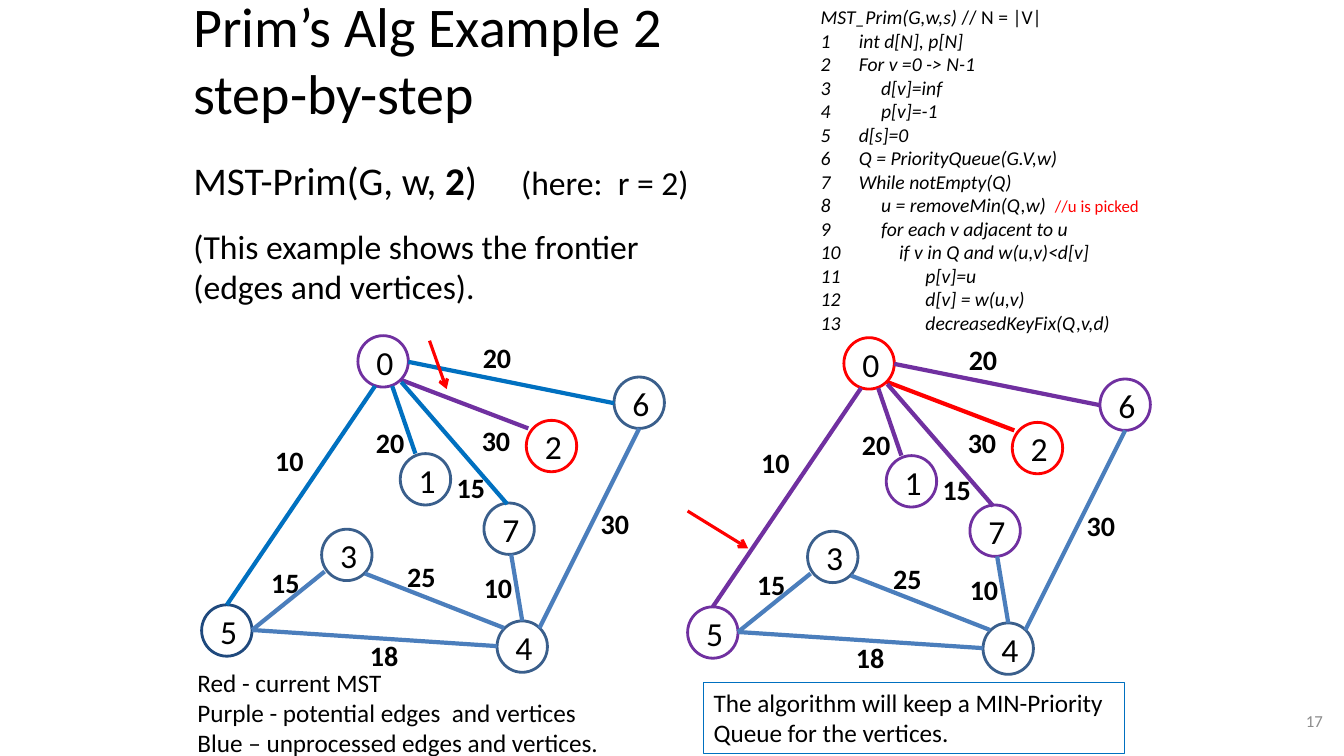
import dataclasses

import lxml.etree
import pptx
import pptx.dml.color
import pptx.enum.shapes
import pptx.enum.text
import pptx.oxml.ns
import pptx.util

Inches, Pt = pptx.util.Inches, pptx.util.Pt
qn = pptx.oxml.ns.qn
MSO_SHAPE = pptx.enum.shapes.MSO_SHAPE
ALIGN = pptx.enum.text.PP_ALIGN
ANCHOR = pptx.enum.text.MSO_ANCHOR
AUTO_SIZE = pptx.enum.text.MSO_AUTO_SIZE
BREAK = None


@dataclasses.dataclass
class Theme:
    font: str = "Calibri"
    # Colours
    text: str = "000000"
    muted: str = "8C8C8C"
    tree: str = "FF0000"
    frontier: str = "7030A0"
    pending: str = "0070C0"
    waiting: str = "4B7EBC"
    outline: str = "3A5F8C"
    navy: str = "1F497D"
    # Type sizes
    title: int = 40
    call: int = 28
    body: int = 24
    weight: int = 20
    note: int = 18
    code: int = 14
    small: int = 12


class Board:
    def __init__(self, slide, theme):
        self.slide, self.theme = slide, theme

    def paint(self, line, color, width):
        line.color.rgb = pptx.dml.color.RGBColor.from_string(color)
        line.width = Pt(width)

    def add_runs(self, paragraph, runs, size, color=None, **formats):
        """Add runs; each is a string, BREAK, or a (string, overrides) pair."""
        for item in runs:
            if item is BREAK:
                paragraph.add_line_break()
                continue
            words, changes = (item, {}) if isinstance(item, str) else item
            values = {"name": self.theme.font, "size": size,
                      "color": color or self.theme.text, **formats, **changes}
            run = paragraph.add_run()
            run.text = words
            run.font.color.rgb = pptx.dml.color.RGBColor.from_string(values.pop("color"))
            values["size"] = Pt(values["size"])
            for key, value in values.items():
                setattr(run.font, key, value)

    def fill_frame(self, frame, paragraphs, size, align=ALIGN.LEFT, wrap=True,
                   anchor=ANCHOR.TOP, auto=AUTO_SIZE.NONE, **formats):
        settings = {"word_wrap": wrap, "vertical_anchor": anchor, "auto_size": auto}
        for key, value in settings.items():
            setattr(frame, key, value)
        for i, runs in enumerate(paragraphs):
            paragraph = frame.add_paragraph() if i else frame.paragraphs[0]
            paragraph.alignment = align
            self.add_runs(paragraph, runs, size, **formats)

    def text(self, box, paragraphs, size, group=None, **options):
        shapes = (group or self.slide).shapes
        frame = shapes.add_textbox(*map(Inches, box)).text_frame
        self.fill_frame(frame, paragraphs, size, **options)
        return frame

    def outline(self, kind, box, color, width, group=None):
        shape = (group or self.slide).shapes.add_shape(kind, *map(Inches, box))
        shape.shadow.inherit = False
        shape.fill.background()
        self.paint(shape.line, color, width)
        return shape

    def line(self, ends, color, width, group=None, arrow=False):
        connector = (group or self.slide).shapes.add_connector(
            pptx.enum.shapes.MSO_CONNECTOR.STRAIGHT, *map(Inches, ends))
        self.paint(connector.line, color, width)
        properties = connector._element.spPr
        if arrow:
            lxml.etree.SubElement(properties.find(qn("a:ln")), qn("a:tailEnd"), type="arrow")
        lxml.etree.SubElement(properties, qn("a:effectLst"))

    def number(self, paragraph, margin):
        properties = paragraph._p.get_or_add_pPr()
        properties.set("marL", str(Inches(margin)))
        properties.set("indent", str(-Inches(margin)))
        lxml.etree.SubElement(properties, qn("a:buAutoNum"), type="arabicPlain")

    def tab_stop(self, paragraph, position):
        tabs = lxml.etree.SubElement(paragraph._p.get_or_add_pPr(), qn("a:tabLst"))
        lxml.etree.SubElement(tabs, qn("a:tab"), pos=str(Inches(position)), algn="l")

    def graph(self, dx, dy, node_colors, edge_colors):
        group = self.slide.shapes.add_group_shape()
        for name, (x, y) in NODES.items():
            x, y = x + dx, y + dy
            color = node_colors.get(name, self.theme.outline)
            self.outline(MSO_SHAPE.OVAL, (x, y, 0.5, 0.51), color, 2, group)
            self.text((x, y + 0.01, 0.46, 0.5), [[f" {name}"]], self.theme.body,
                      group, align=ALIGN.CENTER)
        for pair, (x1, y1, x2, y2) in EDGES.items():
            self.line((x1 + dx, y1 + dy, x2 + dx, y2 + dy),
                      edge_colors.get(pair, self.theme.waiting), 3, group)
        for weight, x, y in WEIGHTS:
            self.text((x + dx, y + dy, 0.49, 0.44), [[str(weight)]], self.theme.weight,
                      wrap=False, bold=True)


# Graph geometry, shared by both stages
NODES = {0: (3.55, 3.33), 1: (3.97, 4.5), 7: (4.8, 4.99), 2: (5.22, 4.17),
         5: (2, 6), 3: (3.19, 5.25), 4: (4.93, 6.16), 6: (6.09, 3.74)}
EDGES = {(0, 6): (4.05, 3.59, 6.09, 4), (0, 2): (3.98, 3.77, 5.24, 4.25),
         (0, 1): (3.89, 3.83, 4.12, 4.5), (0, 5): (3.72, 3.83, 2.25, 6),
         (0, 7): (3.98, 3.79, 5.03, 5), (5, 3): (2.5, 6.25, 3.22, 5.67),
         (5, 4): (2.5, 6.25, 4.93, 6.41), (3, 4): (3.62, 5.69, 5, 6.23),
         (7, 4): (5.07, 5.5, 5.18, 6.16), (6, 4): (6.34, 4.25, 5.35, 6.23)}
WEIGHTS = [(10, 2.63, 4.35), (20, 4.69, 3.33), (30, 4.68, 4.15), (20, 3.63, 4.17),
           (15, 4.43, 4.62), (30, 5.86, 4.98), (10, 4.7, 5.61), (18, 3.57, 6.29),
           (15, 2.59, 5.56), (25, 3.94, 5.5)]

# Pseudocode: indent in inches, then the statement
CODE = [(0, "int d[N], p[N]"), (0, "For v =0 -> N-1"), (0.22, "d[v]=inf"),
        (0.22, "p[v]=-1"), (0, "d[s]=0"), (0, "Q = PriorityQueue(G.V,w)"),
        (0, "While notEmpty(Q)"), (0.22, "u = removeMin(Q,w)  "),
        (0.22, "for each v adjacent to u"), (0.4, "if v in Q and w(u,v)<d[v]"),
        (0.66, "p[v]=u"), (0.66, "d[v] = w(u,v)"), (0.66, "decreasedKeyFix(Q,v,d)")]
PICKED_STEP = 8


def main():
    deck = pptx.Presentation()
    deck.slide_width, deck.slide_height = Inches(13.33), Inches(7.5)
    theme = Theme()
    board = Board(deck.slides.add_slide(deck.slide_layouts[6]), theme)

    # Title and slide number
    board.text((1.82, 0.08, 5.64, 1), [["Prim’s Alg Example 2 ", BREAK, "step-by-step"]],
               theme.title, anchor=ANCHOR.MIDDLE)
    board.text((10.11, 6.95, 3.11, 0.4), [["17"]], theme.small, align=ALIGN.RIGHT,
               anchor=ANCHOR.MIDDLE, color=theme.muted)

    # Right graph: vertex 0 joins the tree, arrow at the next edge
    spokes = [(0, 6), (0, 1), (0, 5), (0, 7)]
    board.graph(4.82, 0.02,
                {0: theme.tree, 2: theme.tree, **dict.fromkeys((1, 5, 6, 7), theme.frontier)},
                {(0, 2): theme.tree, **dict.fromkeys(spokes, theme.frontier)})
    board.line((6.82, 5.07, 7.42, 5.44), theme.tree, 2.25, arrow=True)

    # Left graph: only vertex 2 is in the tree
    board.graph(0, 0, {0: theme.frontier, 2: theme.tree, 5: theme.navy},
                {(0, 2): theme.frontier, **dict.fromkeys(spokes, theme.pending)})
    board.line((4.26, 3.38, 4.43, 3.86), theme.tree, 2.25, arrow=True)

    # Colour legend and queue note
    board.text((1.86, 6.57, 4.23, 1.01),
               [["Red - current MST"], ["Purple - potential edges  and vertices"],
                ["Blue – unprocessed edges and vertices."]], theme.note, wrap=False)
    queue_note = board.outline(MSO_SHAPE.RECTANGLE, (6.98, 6.77, 4.17, 0.71),
                               theme.pending, 0.75)
    board.fill_frame(queue_note.text_frame,
                     [["The algorithm will keep a MIN-Priority Queue for the vertices."]],
                     theme.note)

    # Call and explanation
    call = board.text((1.82, 1.5, 5.58, 1.58),
                      [["MST-Prim(G, w, ", ("2", {"bold": True}), ")\t",
                        ("(here:  r = 2)", {"size": theme.body})],
                       [("(This example shows the frontier (edges and vertices).",
                         {"size": theme.body})]], theme.call)
    board.tab_stop(call.paragraphs[0], 3.25)
    call.paragraphs[1].space_before = Pt(16)

    # Pseudocode
    header = ["MST_Prim(G,w,s) ", ("// N = |V|", {"italic": False})]
    steps = [[statement] for _, statement in CODE]
    steps[PICKED_STEP - 1].append(
        ("//u is picked", {"size": theme.small, "color": theme.tree, "italic": False}))
    code = board.text((8.04, 0, 3.38, 3.47), [header] + steps, theme.code,
                      wrap=False, italic=True)
    for paragraph, (indent, _) in zip(code.paragraphs[1:], CODE):
        board.number(paragraph, 0.38 + indent)

    deck.save("out.pptx")


if __name__ == "__main__":
    main()
